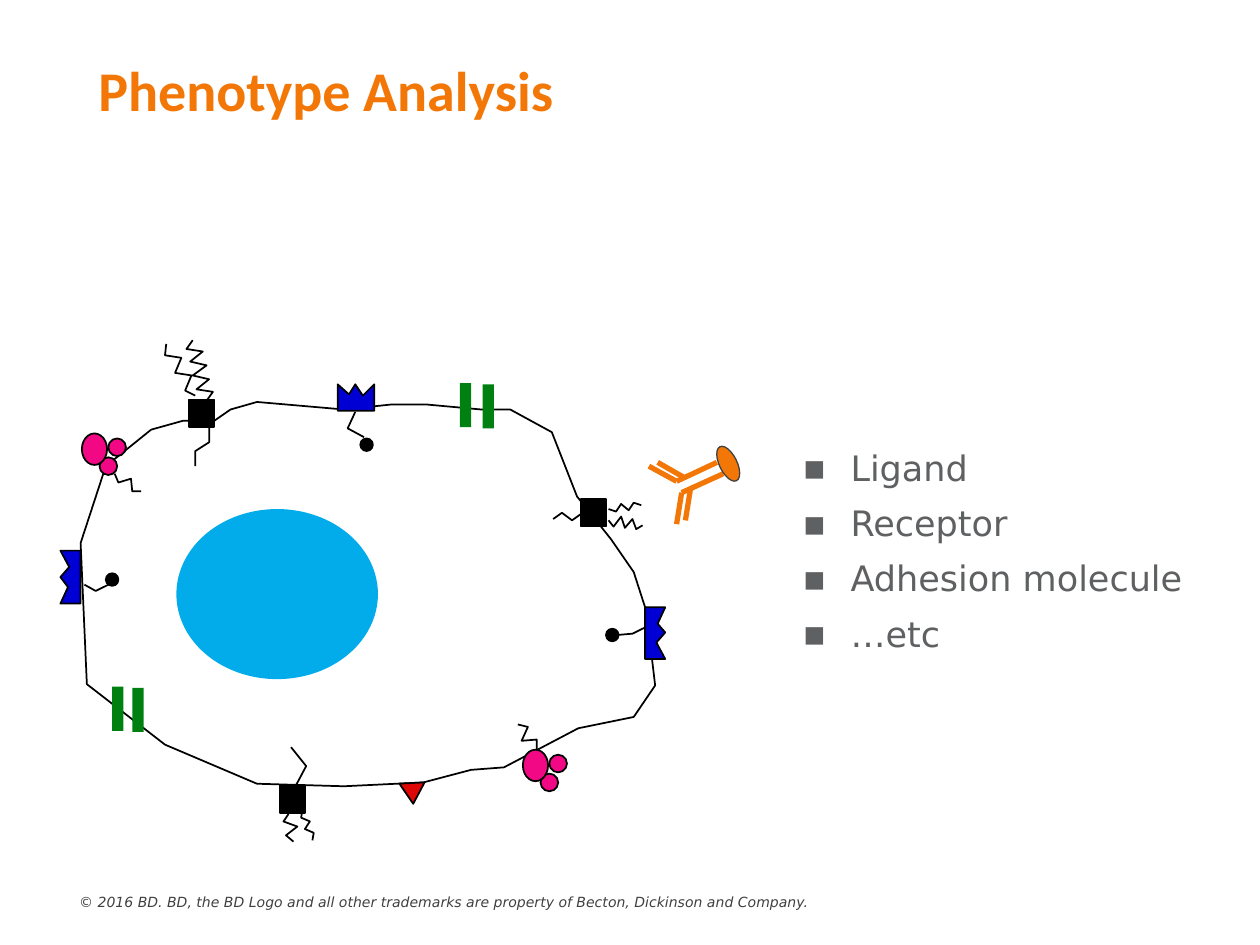
import math

import pptx
import pptx.dml.color
import pptx.enum.shapes
import pptx.enum.text
import pptx.oxml.ns
import pptx.util
from lxml import etree

PX = 9144  # 100 px to the inch

ORANGE = pptx.dml.color.RGBColor(0xF2, 0x77, 0x07)
GREY = pptx.dml.color.RGBColor(0x5F, 0x60, 0x62)
DARK_GREY = pptx.dml.color.RGBColor(0x40, 0x40, 0x41)
BLACK = pptx.dml.color.RGBColor(0x00, 0x00, 0x00)
WHITE = pptx.dml.color.RGBColor(0xFF, 0xFF, 0xFF)
SKY = pptx.dml.color.RGBColor(0x02, 0xAB, 0xEA)
BLUE = pptx.dml.color.RGBColor(0x00, 0x00, 0xD4)
GREEN = pptx.dml.color.RGBColor(0x00, 0x80, 0x11)
PINK = pptx.dml.color.RGBColor(0xF2, 0x08, 0x84)
RED = pptx.dml.color.RGBColor(0xDD, 0x08, 0x06)

OVAL = pptx.enum.shapes.MSO_SHAPE.OVAL
RECTANGLE = pptx.enum.shapes.MSO_SHAPE.RECTANGLE

MEMBRANE = [
    (64, 431), (84, 370), (120, 341), (145, 334), (170, 334), (183, 325), (204, 319),
    (273, 325), (311, 321), (338, 321), (382, 325), (405, 325), (438, 343), (458, 394),
    (485, 428), (503, 454), (513, 485), (520, 544), (503, 569), (459, 578), (400, 609),
    (374, 611), (336, 621), (273, 624), (204, 622), (131, 591), (69, 543)]

# Fractions along the base and outwards from it
CROWN_PROFILE = [(0, 0), (0, 1), (0.32, 0.6), (0.5, 1), (0.68, 0.55), (1, 1), (1, 0)]

# Start, end, number of kinks, sway of the first kink
STRANDS = [
    ((155, 370), (166, 339), 2, -4),
    ((155, 314), (132, 273), 5, -5),
    ((164, 318), (153, 270), 8, 6),
    ((234, 625), (231, 593), 1, 11),
    ((229, 646), (233, 668), 3, 5),
    ((240, 643), (248, 667), 4, 3),
    ((461, 408), (439, 412), 2, -4),
    ((483, 404), (509, 401), 4, 3),
    ((483, 413), (510, 417), 5, 4),
    ((282, 327), (289, 347), 1, 10),
    ((67, 464), (86, 464), 1, 5),
    ((512, 498), (490, 504), 1, -2),
    ((426, 595), (411, 575), 3, 5),
    ((91, 376), (112, 390), 3, 4)]

ANTIBODY = [
    (537, 416, 541, 391), (515, 370, 537, 382), (541, 391, 574, 376),
    (537, 382, 569, 367), (544, 413, 548, 388), (522, 367, 543, 379)]


def place(shape, *box):
    shape.left, shape.top, shape.width, shape.height = (length * PX for length in box)


def paint(shape, fill, line, weight=1):
    shape.shadow.inherit = False
    if fill is None:
        shape.fill.background()
    else:
        shape.fill.solid()
        shape.fill.fore_color.rgb = fill
    if line is None:
        shape.line.fill.background()
    else:
        shape.line.color.rgb = line
        shape.line.width = pptx.util.Pt(weight)
    return shape


def add_preset(slide, preset, box, fill, line=None, weight=1):
    shape = slide.shapes.add_shape(preset, *(length * PX for length in box))
    return paint(shape, fill, line, weight)


def add_outline(slide, points, fill=None, close=True):
    builder = slide.shapes.build_freeform(*points[0], scale=PX)
    builder.add_line_segments(points[1:], close=close)
    return paint(builder.convert_to_shape(), fill, BLACK)


def add_strand(slide, start, end, kinks, sway):
    """A zigzag whose kinks lie on alternate sides of the line from start to end."""
    run, rise = end[0] - start[0], end[1] - start[1]
    length = math.hypot(run, rise)
    points = [start]
    for kink in range(kinks):
        part = (kink + 1) / (kinks + 1)
        offset = sway * (-1) ** kink / length
        points.append((round(start[0] + run * part - rise * offset),
                       round(start[1] + rise * part + run * offset)))
    add_outline(slide, points + [end], close=False)


def add_crown(slide, corner, along, outward):
    points = [tuple(round(c + a * base + o * height)
                    for c, a, o in zip(corner, along, outward))
              for base, height in CROWN_PROFILE]
    add_outline(slide, points, BLUE)


def add_line(slide, ends, color, weight):
    line = slide.shapes.add_connector(
        pptx.enum.shapes.MSO_CONNECTOR.STRAIGHT, *(length * PX for length in ends))
    line.line.color.rgb = color
    line.line.width = pptx.util.Pt(weight)
    etree.SubElement(line._element.spPr, pptx.oxml.ns.qn("a:effectLst"))


def add_run(paragraph, text, font_name, size, color, bold=False, italic=False):
    run = paragraph.add_run()
    run.text = text
    font = run.font
    font.name, font.size = font_name, pptx.util.Pt(size)
    font.bold, font.italic = bold, italic
    font.color.rgb = color


def set_bullet(paragraph, character, indent):
    properties = paragraph._p.get_or_add_pPr()
    properties.set("marL", str(indent * PX))
    properties.set("indent", str(-indent * PX))
    etree.SubElement(properties, pptx.oxml.ns.qn("a:buFont"), typeface="DejaVu Sans")
    etree.SubElement(properties, pptx.oxml.ns.qn("a:buChar"), char=character)


def fill_title(slide, text):
    title = slide.shapes.title
    place(title, 68, 29, 737, 83)
    title.text_frame.auto_size = pptx.enum.text.MSO_AUTO_SIZE.NONE
    title.text_frame.vertical_anchor = pptx.enum.text.MSO_ANCHOR.MIDDLE
    paragraph = title.text_frame.paragraphs[0]
    paragraph.alignment = pptx.enum.text.PP_ALIGN.LEFT
    add_run(paragraph, text, "Calibri", 32, ORANGE, bold=True)


def fill_list(slide, items):
    body = slide.placeholders[1]
    place(body, 627, 353, 342, 199)
    frame = body.text_frame
    frame.auto_size = pptx.enum.text.MSO_AUTO_SIZE.NONE
    for index, item in enumerate(items):
        paragraph = frame.add_paragraph() if index else frame.paragraphs[0]
        set_bullet(paragraph, "▪", 38)
        paragraph.line_spacing = 0.9
        paragraph.space_before = pptx.util.Pt(10 if index else 0)
        add_run(paragraph, item, "DejaVu Sans", 20, GREY)


def add_footer(slide, text):
    box = slide.shapes.add_textbox(*(length * PX for length in (53, 704, 700, 23)))
    box.text_frame.word_wrap = True
    add_run(box.text_frame.paragraphs[0], text, "DejaVu Sans", 8, DARK_GREY, italic=True)


def add_cluster(slide, x, y):
    """Two small ovals behind a large one whose corner is at x, y."""
    for box in ((x + 14, y + 19, 14, 14), (x + 21, y + 4, 14, 14), (x, y, 20, 25)):
        add_preset(slide, OVAL, box, PINK, BLACK)


def add_cell(slide):
    add_outline(slide, MEMBRANE, WHITE)
    add_preset(slide, OVAL, (140, 404, 160, 135), SKY)
    for x, y in ((150, 317), (222, 623), (461, 396)):
        add_preset(slide, RECTANGLE, (x, y, 20, 22), BLACK, BLACK)
    add_crown(slide, (268, 326), (29, 0), (0, -21))
    add_crown(slide, (64, 479), (0, -42), (-16, 0))
    add_crown(slide, (512, 482), (0, 41), (16, 0))
    for x, y in ((286, 348), (481, 499), (84, 455)):
        add_preset(slide, OVAL, (x, y, 10, 10), BLACK, BLACK)
    for x, y in ((365, 304), (383, 305), (89, 545), (105, 546)):
        add_preset(slide, RECTANGLE, (x, y, 9, 35), GREEN)
    for x, y in ((415, 595), (65, 344)):
        add_cluster(slide, x, y)
    for strand in STRANDS:
        add_strand(slide, *strand)
    add_outline(slide, [(337, 621), (317, 622), (328, 638)], RED)


def add_antibody(slide):
    for ends in ANTIBODY:
        add_line(slide, ends, ORANGE, 3)
    label = add_preset(slide, OVAL, (563, 361, 30, 14), ORANGE, DARK_GREY, 0.75)
    label.rotation = 244


def main():
    presentation = pptx.Presentation()
    presentation.slide_width, presentation.slide_height = 1000 * PX, 750 * PX
    slide = presentation.slides.add_slide(presentation.slide_layouts[1])
    fill_title(slide, "Phenotype Analysis")
    fill_list(slide, ["Ligand", "Receptor", "Adhesion molecule", "…etc"])
    add_cell(slide)
    add_antibody(slide)
    add_footer(slide, "© 2016 BD. BD, the BD Logo and all other trademarks are "
                      "property of Becton, Dickinson and Company.")
    presentation.save("out.pptx")


if __name__ == "__main__":
    main()
